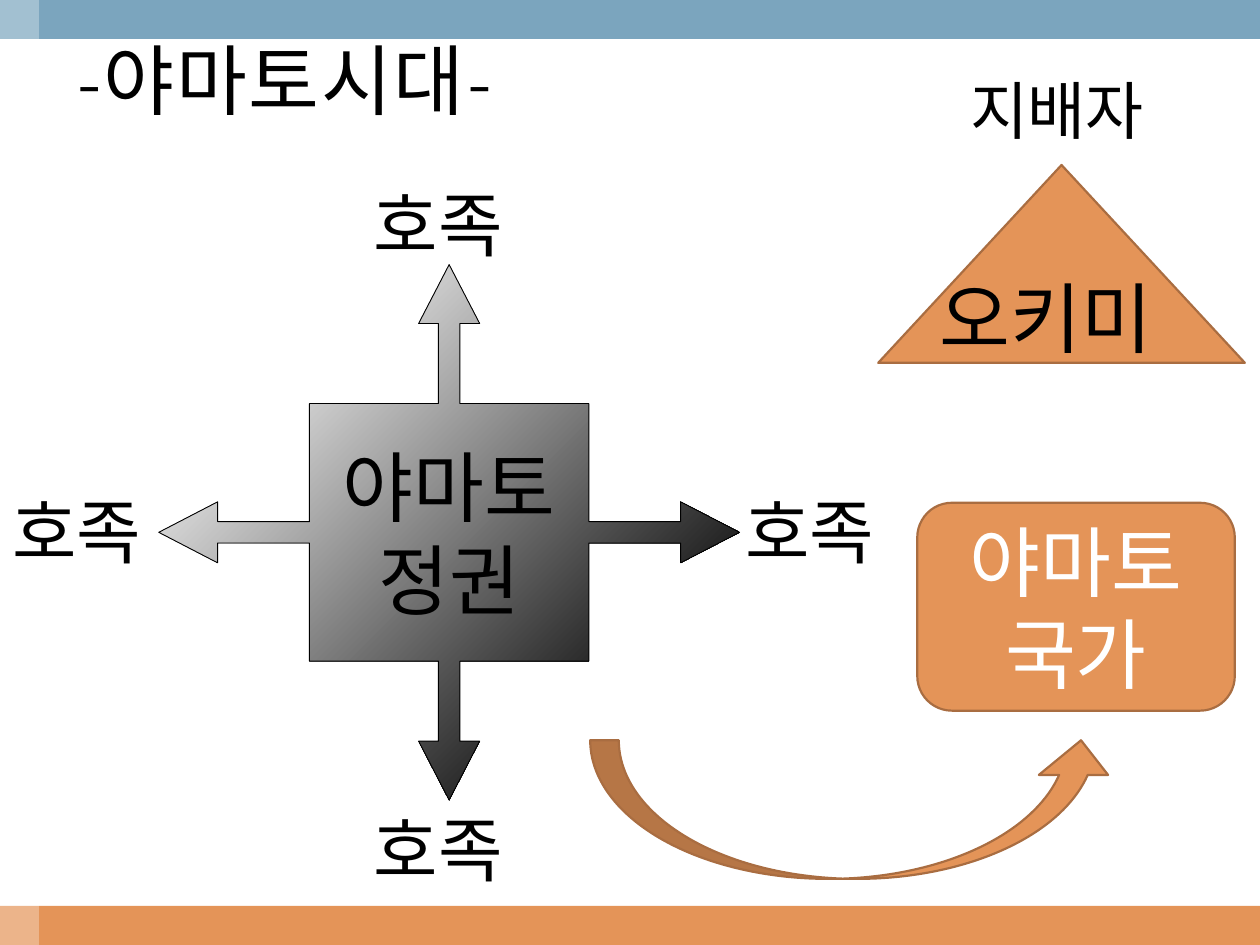
from dataclasses import dataclass

from lxml import etree
from pptx import Presentation
from pptx.dml.color import RGBColor
from pptx.enum.shapes import MSO_SHAPE
from pptx.enum.text import MSO_ANCHOR, MSO_AUTO_SIZE, PP_ALIGN
from pptx.oxml.ns import qn
from pptx.util import Inches, Pt

RECTANGLE = MSO_SHAPE.RECTANGLE
CALLOUT = MSO_SHAPE.QUAD_ARROW_CALLOUT
CURVED_ARROW = MSO_SHAPE.CURVED_RIGHT_ARROW
ROUNDED_BLOCK = MSO_SHAPE.FLOWCHART_ALTERNATE_PROCESS
TRIANGLE = MSO_SHAPE.FLOWCHART_EXTRACT
MIDDLE, TOP = MSO_ANCHOR.MIDDLE, MSO_ANCHOR.TOP
FIT_SHAPE, NO_FIT = MSO_AUTO_SIZE.SHAPE_TO_FIT_TEXT, MSO_AUTO_SIZE.NONE
CENTER, LEFT = PP_ALIGN.CENTER, PP_ALIGN.LEFT

SLIDE_WIDTH, SLIDE_HEIGHT = Inches(10), Inches(7.5)
COLUMNS, ROWS = 100, 75
BAND = 3.1
FONT = "Cambria"
BLACK, WHITE, ORANGE, BLUE, BROWN = "000000", "FFFFFF", "E49458", "7BA5BE", "A96D41"


@dataclass(frozen=True)
class Box:
    """Place on the grid, in columns and rows."""
    column: float
    row: float
    width: float
    height: float

    def lengths(self) -> tuple:
        """Return left, top, width and height as slide lengths."""
        across, down = SLIDE_WIDTH / COLUMNS, SLIDE_HEIGHT / ROWS
        return (round(self.column * across), round(self.row * down),
                round(self.width * across), round(self.height * down))


@dataclass(frozen=True)
class Block:
    """Filled preset shape with optional centred lines of text."""
    kind: int
    box: Box
    fill: str = ORANGE
    line: str | None = None
    line_width: float = 1.25
    adjustments: tuple = ()
    rotation: float = 0
    lines: tuple = ()
    text_color: str = BLACK


@dataclass(frozen=True)
class Label:
    """Free text with its size."""
    text: str
    box: Box
    size: float


BANDS = (
    Block(RECTANGLE, Box(0, ROWS - BAND, COLUMNS, BAND)),
    Block(RECTANGLE, Box(0, 0, COLUMNS, BAND), BLUE),
)
SIDE_STRIP = Block(RECTANGLE, Box(0, 0, BAND, ROWS), WHITE)
TITLE = Label("-야마토시대-", Box(5.1, 0, 90, 12.5), 44)
GOVERNMENT = Block(CALLOUT, Box(12.6, 21, 46.1, 42.5), BLACK, BLACK, 0.5,
                   (0.04, 0.057, 0.11, 0.481), lines=("야마토", "정권"))
CLAN_CORNERS = ((28.7, 13.9), (0, 38.3), (28.7, 63.5), (58.2, 38.3))
CLANS = tuple(Label("호족", Box(*corner, 12.7, 7.7), 40) for corner in CLAN_CORNERS)
STATE_BLOCKS = (
    Block(CURVED_ARROW, Box(62.2, 43.4, 11, 41.7), line=BROWN,
          adjustments=(0.206, 0.5, 0.25), rotation=270),
    Block(ROUNDED_BLOCK, Box(72.8, 39.9, 25.2, 16.5), line=BROWN,
          lines=("야마토", "국가"), text_color=WHITE),
    Block(TRIANGLE, Box(69.7, 13.1, 29.1, 15.7), line=BROWN),
)
RULER_LABELS = (
    Label("오키미", Box(73.6, 21, 20.5, 8.4), 44),
    Label("지배자", Box(76, 5.2, 17.2, 7.1), 36),
)


def color(value: str) -> RGBColor:
    """Turn a hex string into a colour."""
    return RGBColor.from_string(value)


def apply(target, values: dict) -> None:
    """Set each named attribute on the target."""
    for name, value in values.items():
        setattr(target, name, value)


def write(frame, lines: tuple, size: float, text_color: str, alignment):
    """Write one paragraph per line and return the last run."""
    for index, line in enumerate(lines):
        paragraph = frame.add_paragraph() if index else frame.paragraphs[0]
        paragraph.alignment = alignment
        run = paragraph.add_run()
        run.text = line
        apply(run.font, {"name": FONT, "size": Pt(size)})
        run.font.color.rgb = color(text_color)
    return run


def draw_block(slide, block: Block):
    """Draw a filled shape and its text."""
    shape = slide.shapes.add_shape(block.kind, *block.box.lengths())
    shape.shadow.inherit = False
    shape.rotation = block.rotation
    for index, value in enumerate(block.adjustments):
        shape.adjustments[index] = value
    shape.fill.solid()
    shape.fill.fore_color.rgb = color(block.fill)
    if block.line:
        shape.line.color.rgb = color(block.line)
        shape.line.width = Pt(block.line_width)
    else:
        shape.line.fill.background()
    if block.lines:
        apply(shape.text_frame, {"word_wrap": True, "vertical_anchor": MIDDLE})
        write(shape.text_frame, block.lines, 44, block.text_color, CENTER)
    return shape


def draw_label(slide, label: Label, **overrides):
    """Draw a text box and return its run."""
    frame = slide.shapes.add_textbox(*label.box.lengths()).text_frame
    apply(frame, {"word_wrap": False, "auto_size": FIT_SHAPE,
                  "vertical_anchor": TOP} | overrides)
    return write(frame, (label.text,), label.size, BLACK, LEFT)


def set_opacity(shape, percent: int) -> None:
    """Make a solid fill partly transparent."""
    fill_color = shape.fill._xPr.find(qn("a:solidFill"))[0]
    etree.SubElement(fill_color, qn("a:alpha")).set("val", str(percent * 1000))


def shade(shape, stops: tuple, angle: float) -> None:
    """Fill a shape with a linear gradient."""
    shape.fill.gradient()
    shape.fill.gradient_angle = angle
    for stop, (position, value) in zip(shape.fill.gradient_stops, stops):
        stop.position = position
        stop.color.rgb = color(value)


def main() -> None:
    """Build and save the slide."""
    presentation = Presentation()
    apply(presentation, {"slide_width": SLIDE_WIDTH, "slide_height": SLIDE_HEIGHT})
    slide = presentation.slides.add_slide(presentation.slide_layouts[6])
    for band in BANDS:
        draw_block(slide, band)
    set_opacity(draw_block(slide, SIDE_STRIP), 30)
    title = draw_label(slide, TITLE, word_wrap=True, auto_size=NO_FIT,
                       vertical_anchor=MIDDLE)
    title.font._element.set("spc", "100")
    shade(draw_block(slide, GOVERNMENT), ((0.18, "E7E7E7"), (0.87, BLACK)), 315)
    for clan in CLANS:
        draw_label(slide, clan)
    for block in STATE_BLOCKS:
        draw_block(slide, block)
    for label in RULER_LABELS:
        draw_label(slide, label)
    presentation.save("out.pptx")


if __name__ == "__main__":
    main()
